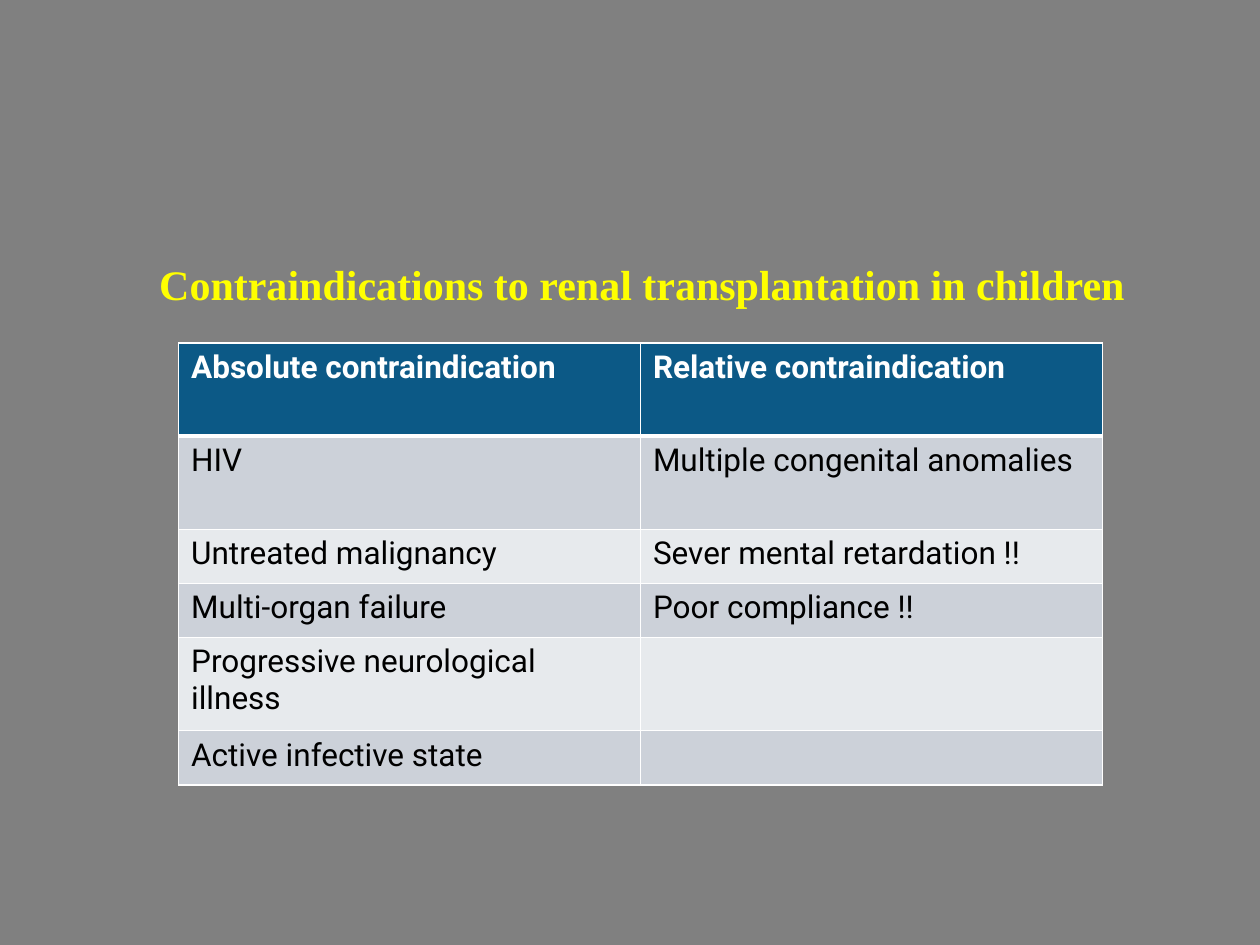
"""Build a slide listing contraindications to renal transplantation."""
from dataclasses import dataclass

from lxml import etree
from pptx import Presentation
from pptx import util as u
from pptx.dml.color import RGBColor
from pptx.enum import text
from pptx.oxml import ns

HUES = {
    "back": "808080",
    "title": "FFFF00",
    "head": "0C5986",
    "dark": "CCD1D9",
    "light": "E7EAED",
    "line": "FFFFFF",
    "ink": "000000",
}


@dataclass
class Style:
    font: str
    size: int
    hue: str
    bold: bool = False


@dataclass
class Row:
    left: str
    right: str
    high: float


TITLE = Style("Times New Roman", 24, "title", True)
HEAD = Style("Roboto", 18, "line", True)
BODY = Style("Roboto", 18, "ink")
WIDE = 9.31
TALL, LOW = 1.88, 1.09
ROWS = [
    Row("Absolute contraindication", "Relative contraindication", TALL),
    Row("HIV", "Multiple congenital anomalies", TALL),
    Row("Untreated malignancy", "Sever mental retardation !!", LOW),
    Row("Multi-organ failure", "Poor compliance !!", LOW),
    Row("Progressive neurological illness", "", TALL),
    Row("Active infective state", "", LOW),
]


def paint(fill, hue: str) -> None:
    """Give a fill one solid colour."""
    fill.solid()
    fill.fore_color.rgb = RGBColor.from_string(HUES[hue])


def write(frame, words: str, style: Style) -> None:
    """Add one styled run, or size the empty line."""
    par = frame.paragraphs[0]
    font = par.add_run().font if words else par.font
    if words:
        par.runs[0].text = words
    font.name = style.font
    font.size = u.Pt(style.size)
    font.bold = style.bold
    font.color.rgb = RGBColor.from_string(HUES[style.hue])


def edge(cell, top: int, base: int) -> None:
    """Draw the four borders of a cell."""
    props = cell._tc.get_or_add_tcPr()
    for side, size in (("L", 1), ("R", 1), ("T", top), ("B", base)):
        line = etree.SubElement(props, ns.qn(f"a:ln{side}"), w=str(u.Pt(size)))
        solid = etree.SubElement(line, ns.qn("a:solidFill"))
        etree.SubElement(solid, ns.qn("a:srgbClr"), val=HUES["line"])


def grid(slide, rows: list[Row]) -> None:
    """Draw the table with a header and banded rows."""
    high = sum(row.high for row in rows)
    frame = slide.shapes.add_table(
        len(rows), 2, u.Cm(3.6), u.Cm(6.91), u.Cm(2 * WIDE), u.Cm(high))
    table = frame.table
    for col in table.columns:
        col.width = u.Cm(WIDE)
    for i, row in enumerate(rows):
        table.rows[i].height = u.Cm(row.high)
        hue = "head" if i == 0 else "dark" if i % 2 else "light"
        for j, words in enumerate((row.left, row.right)):
            cell = table.cell(i, j)
            edge(cell, 3 if i == 1 else 1, 3 if i == 0 else 1)
            paint(cell.fill, hue)
            write(cell.text_frame, words, BODY if i else HEAD)


def title(slide, words: str) -> None:
    """Draw the slide title."""
    box = slide.shapes.add_textbox(
        u.Cm(2.96), u.Cm(5.08), u.Cm(20.75), u.Cm(1.28))
    box.text_frame.word_wrap = True
    box.text_frame.auto_size = text.MSO_AUTO_SIZE.SHAPE_TO_FIT_TEXT
    write(box.text_frame, words, TITLE)


def main() -> None:
    """Build and save the deck."""
    deck = Presentation()
    deck.slide_width, deck.slide_height = u.Cm(25.4), u.Cm(19.05)
    slide = deck.slides.add_slide(deck.slide_layouts[6])
    paint(slide.background.fill, "back")
    grid(slide, ROWS)
    title(slide, "Contraindications to renal transplantation in children")
    deck.save("out.pptx")


if __name__ == "__main__":
    main()
